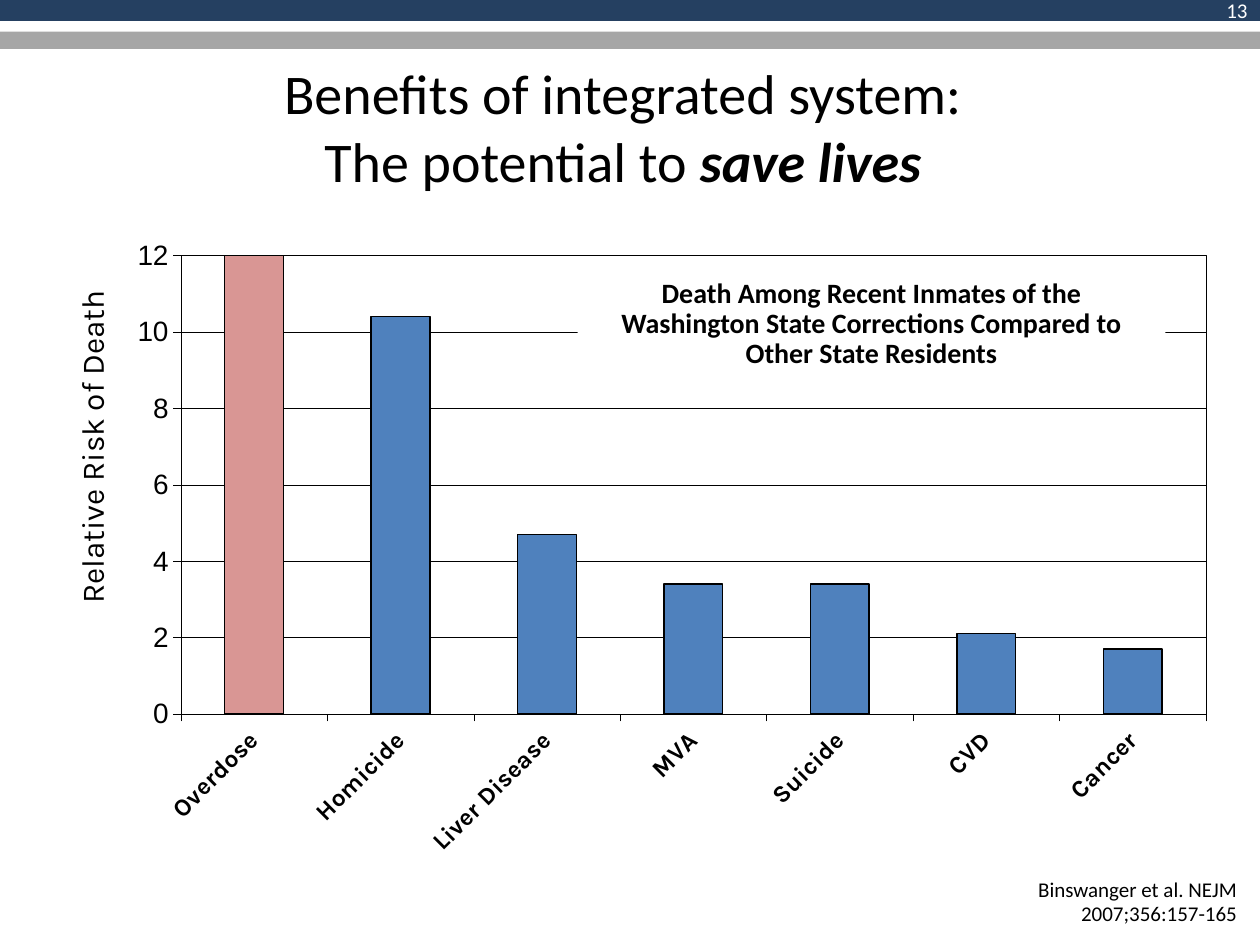
import dataclasses

import lxml.etree
import pptx
import pptx.chart.data
import pptx.dml.color
import pptx.enum.chart
import pptx.enum.shapes
import pptx.enum.text
import pptx.oxml
import pptx.oxml.ns
import pptx.util

Pt = pptx.util.Pt
ALIGN = pptx.enum.text.PP_ALIGN
ANCHOR = pptx.enum.text.MSO_ANCHOR
qn = pptx.oxml.ns.qn


@dataclasses.dataclass(frozen=True)
class Theme:
    navy: str = "254061"
    gray: str = "A6A6A6"
    blue: str = "4F81BD"
    rose: str = "D99694"
    black: str = "000000"
    white: str = "FFFFFF"
    body_font: str = "Calibri"
    chart_font: str = "Karla"
    number_font: str = "Arial"
    title_size: int = 32
    axis_title_size: int = 18
    label_size: int = 16
    category_size: int = 14
    small_size: int = 12
    hairline: float = 0.22
    outline: float = 0.89


def rgb(color):
    return pptx.dml.color.RGBColor.from_string(color)


def set_font(font, name, size, color, bold=False):
    font.name, font.size, font.bold = name, Pt(size), bold
    font.color.rgb = rgb(color)


def set_line(line, color, width):
    line.color.rgb = rgb(color)
    line.width = Pt(width)


def manual_layout(x, y, width=None, height=None):
    layout = lxml.etree.Element(qn("c:layout"))
    manual = lxml.etree.SubElement(layout, qn("c:manualLayout"))
    settings = [("xMode", "edge"), ("yMode", "edge"), ("x", x), ("y", y)]
    if width:
        settings.insert(0, ("layoutTarget", "inner"))
        settings += [("w", width), ("h", height)]
    for tag, value in settings:
        lxml.etree.SubElement(manual, qn(f"c:{tag}")).set("val", str(value))
    return layout


class SlideBuilder:
    def __init__(self, theme, slide):
        self.theme = theme
        self.slide = slide

    def rectangle(self, left, top, width, height, color):
        box = self.slide.shapes.add_shape(
            pptx.enum.shapes.MSO_SHAPE.RECTANGLE,
            Pt(left), Pt(top), Pt(width), Pt(height))
        box.shadow.inherit = False
        box.fill.solid()
        box.fill.fore_color.rgb = rgb(color)
        box.line.fill.background()
        return box

    def text(self, left, top, width, height, lines, size, **style):
        box = self.slide.shapes.add_textbox(
            Pt(left), Pt(top), Pt(width), Pt(height))
        return self.fill_text(box, lines, size, **style)

    def fill_text(self, box, lines, size, color=None, align=ALIGN.CENTER,
                  anchor=ANCHOR.TOP, spacing=None, bold=False):
        frame = box.text_frame
        frame.word_wrap = True
        frame.vertical_anchor = anchor
        for index, line in enumerate(lines):
            paragraph = frame.add_paragraph() if index else frame.paragraphs[0]
            paragraph.text = line
            paragraph.alignment = align
            paragraph.line_spacing = spacing
            set_font(paragraph.font, self.theme.body_font, size,
                     color or self.theme.black, bold)
        return frame

    def axis(self, axis, font, size, bold):
        axis.major_tick_mark = pptx.enum.chart.XL_TICK_MARK.OUTSIDE
        axis.minor_tick_mark = pptx.enum.chart.XL_TICK_MARK.NONE
        set_font(axis.tick_labels.font, font, size, self.theme.black, bold)
        set_line(axis.format.line, self.theme.black, self.theme.hairline)

    def column_chart(self, left, top, width, height, risks, value_title):
        theme = self.theme
        data = pptx.chart.data.CategoryChartData()
        data.categories = list(risks)
        data.add_series("Series 1", list(risks.values()))
        chart = self.slide.shapes.add_chart(
            pptx.enum.chart.XL_CHART_TYPE.COLUMN_CLUSTERED,
            Pt(left), Pt(top), Pt(width), Pt(height), data).chart
        chart.has_legend = False
        chart.has_title = False
        set_font(chart.font, theme.chart_font, theme.label_size, theme.black, True)

        columns = chart.plots[0]
        columns.gap_width = 150
        columns.vary_by_categories = False
        series = columns.series[0]
        for part, color in ((series, theme.blue), (series.points[0], theme.rose)):
            part.format.fill.solid()
            part.format.fill.fore_color.rgb = rgb(color)
            set_line(part.format.line, theme.black, theme.outline)

        causes, risk = chart.category_axis, chart.value_axis
        self.axis(causes, theme.chart_font, theme.category_size, True)
        self.axis(risk, theme.number_font, theme.label_size, False)
        causes._element.find(qn("c:txPr")).find(qn("a:bodyPr")).set("rot", "-2700000")
        risk.minimum_scale, risk.maximum_scale, risk.major_unit = 0, 12, 2
        risk.has_major_gridlines = True
        set_line(risk.major_gridlines.format.line, theme.black, theme.hairline)

        title_frame = risk.axis_title.text_frame
        title_frame.text = value_title
        set_font(title_frame.paragraphs[0].font, theme.chart_font,
                 theme.axis_title_size, theme.black)
        title_frame._txBody.find(qn("a:bodyPr")).set("rot", "-5400000")
        title = risk._element.find(qn("c:title"))
        self.place(title, manual_layout(0.02, 0.1), 1)

        plot_area = chart._chartSpace.find(qn("c:chart")).find(qn("c:plotArea"))
        self.place(plot_area, manual_layout(0.118, 0.061, 0.872, 0.612), 0)
        plot_area.append(pptx.oxml.parse_xml(
            f'<c:spPr {pptx.oxml.ns.nsdecls("c", "a")}><a:noFill/>'
            f'<a:ln w="{int(Pt(theme.hairline))}"><a:solidFill>'
            f'<a:srgbClr val="{theme.black}"/></a:solidFill></a:ln></c:spPr>'))

    def place(self, parent, layout, position):
        for old in parent.findall(qn("c:layout")):
            parent.remove(old)
        parent.insert(position, layout)


def main():
    theme = Theme()
    deck = pptx.Presentation()
    deck.slide_width, deck.slide_height = Pt(720), Pt(540)
    page = SlideBuilder(theme, deck.slides.add_slide(deck.slide_layouts[6]))

    page.rectangle(0, 0, 720, 12, theme.navy)
    page.rectangle(0, 18, 720, 10, theme.gray)

    risks = {"Overdose": 12, "Homicide": 10.4, "Liver Disease": 4.7,
             "MVA": 3.4, "Suicide": 3.4, "CVD": 2.1, "Cancer": 1.7}
    page.column_chart(24, 120, 672, 428, risks, "Relative Risk of Death")

    caption = page.rectangle(330, 156, 336, 60, theme.white)
    page.fill_text(caption, ["Death Among Recent Inmates of the Washington State "
                             "Corrections Compared to Other State Residents"],
                   theme.label_size, spacing=0.9, bold=True)

    heading = page.text(0, 30, 712, 84,
                        ["Benefits of integrated system:", "The potential to "],
                        theme.title_size, anchor=ANCHOR.MIDDLE)
    emphasis = heading.paragraphs[1].add_run()
    emphasis.text = "save lives"
    emphasis.font.bold = emphasis.font.italic = True

    page.text(426, 498, 288, 35, ["Binswanger et al. NEJM", "2007;356:157-165"],
              theme.small_size, align=ALIGN.RIGHT, spacing=0.97)
    page.text(552, -8.5, 168, 29, ["13"], theme.small_size, color=theme.white,
              align=ALIGN.RIGHT, anchor=ANCHOR.MIDDLE)

    deck.save("out.pptx")


if __name__ == "__main__":
    main()
